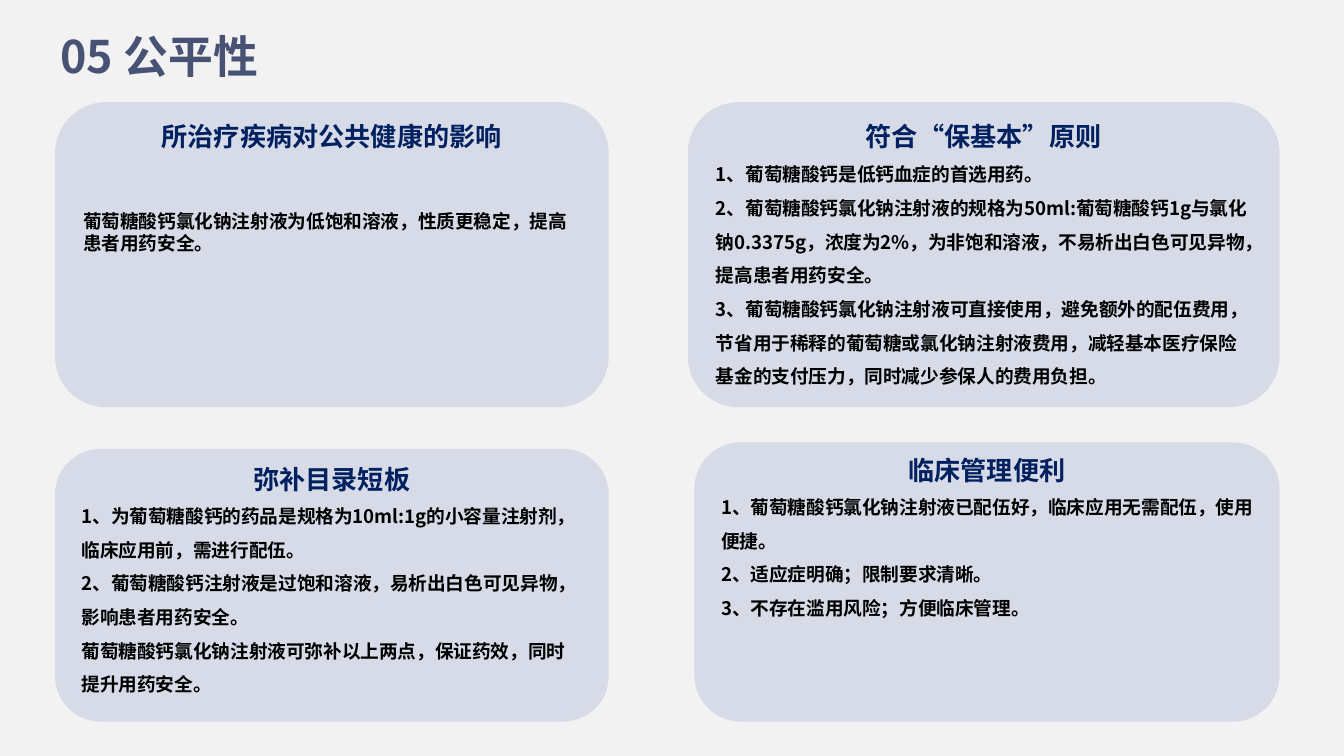
from lxml.etree import SubElement
from pptx import Presentation
from pptx.dml.color import RGBColor
from pptx.enum.shapes import MSO_SHAPE
from pptx.enum.text import MSO_ANCHOR, MSO_AUTO_SIZE, PP_ALIGN
from pptx.oxml.ns import qn
from pptx.util import Pt

FONT = "Noto Sans CJK SC"
TITLE = {"size": Pt(24), "color": "485275"}
HEADING = {"size": Pt(14), "color": "002060"}
BODY = {"size": Pt(10), "color": "000000"}

TOP, MIDDLE = MSO_ANCHOR.TOP, MSO_ANCHOR.MIDDLE
LEFT, RIGHT_EDGE, BOTTOM_EDGE = 29.5, 685.5, 386.6
LEFT_WIDTH = 296.6
ROW_TOP, ROW_HEIGHT = 54.8, 163.4

# Box, anchor, heading, heading spacing, body lines, body paragraph format
PANELS = [
    ((LEFT, ROW_TOP, LEFT_WIDTH, ROW_HEIGHT), TOP,
     "所治疗疾病对公共健康的影响", 0.9,
     ["葡萄糖酸钙氯化钠注射液为低饱和溶液，性质更稳定，提高患者用药安全。"],
     {"space_before": Pt(31)}),
    ((368.5, ROW_TOP, RIGHT_EDGE - 368.5, ROW_HEIGHT), TOP,
     "符合“保基本”原则", 0.9,
     ["1、葡萄糖酸钙是低钙血症的首选用药。",
      "2、葡萄糖酸钙氯化钠注射液的规格为50ml:葡萄糖酸钙1g与氯化钠0.3375g，浓度为2%，"
      "为非饱和溶液，不易析出白色可见异物，提高患者用药安全。",
      "3、葡萄糖酸钙氯化钠注射液可直接使用，避免额外的配伍费用，节省用于稀释的葡萄糖或"
      "氯化钠注射液费用，减轻基本医疗保险基金的支付压力，同时减少参保人的费用负担。"],
     {"line_spacing": 1.5}),
    ((LEFT, 240.5, LEFT_WIDTH, BOTTOM_EDGE - 240.5), MIDDLE,
     "弥补目录短板", 0.6,
     ["1、为葡萄糖酸钙的药品是规格为10ml:1g的小容量注射剂，临床应用前，需进行配伍。",
      "2、葡萄糖酸钙注射液是过饱和溶液，易析出白色可见异物，影响患者用药安全。",
      "葡萄糖酸钙氯化钠注射液可弥补以上两点，保证药效，同时提升用药安全。"],
     {"line_spacing": 1.5}),
    ((372, 237, RIGHT_EDGE - 372, BOTTOM_EDGE - 237), TOP,
     "临床管理便利", 0.7,
     ["1、葡萄糖酸钙氯化钠注射液已配伍好，临床应用无需配伍，使用便捷。",
      "2、适应症明确；限制要求清晰。",
      "3、不存在滥用风险；方便临床管理。"],
     {"line_spacing": 1.5}),
]


def fill_solid(fill, color):
    fill.solid()
    fill.fore_color.rgb = RGBColor.from_string(color)


def set_all(obj, values):
    for name, value in values.items():
        setattr(obj, name, value)


def write(p, text, style, **paragraph_format):
    set_all(p, paragraph_format)
    r = p.add_run()
    r.text = text
    set_all(r.font, {"name": FONT, "size": style["size"], "bold": True})
    fill_solid(r.font.fill, style["color"])
    SubElement(r.font._element, qn("a:ea"), typeface=FONT)


def place_title(s, box, text):
    sp = s.shapes.title
    set_all(sp, dict(zip(("left", "top", "width", "height"), map(Pt, box))))
    tf = sp.text_frame
    set_all(tf, {"auto_size": MSO_AUTO_SIZE.NONE, "vertical_anchor": MIDDLE, "word_wrap": True})
    write(tf.paragraphs[0], text, TITLE, alignment=PP_ALIGN.LEFT)


def add_panel(s, box, anchor, heading, heading_spacing, lines, body_format):
    sp = s.shapes.add_shape(MSO_SHAPE.ROUNDED_RECTANGLE, *map(Pt, box))
    sp.shadow.inherit = False
    fill_solid(sp.fill, "D7DBE7")
    sp.line.fill.background()
    tf = sp.text_frame
    set_all(tf, {"word_wrap": True, "vertical_anchor": anchor})
    write(tf.paragraphs[0], heading, HEADING,
          alignment=PP_ALIGN.CENTER, line_spacing=heading_spacing)
    for line in lines:
        write(tf.add_paragraph(), line, BODY, alignment=PP_ALIGN.LEFT, **body_format)


def main():
    prs = Presentation()
    set_all(prs, {"slide_width": Pt(720), "slide_height": Pt(405)})
    s = prs.slides.add_slide(prs.slide_layouts[5])
    fill_solid(s.background.fill, "F2F2F2")
    place_title(s, (25.2, 11.5, 188, 36), "05 公平性")
    for panel in PANELS:
        add_panel(s, *panel)
    prs.save("out.pptx")


if __name__ == "__main__":
    main()
